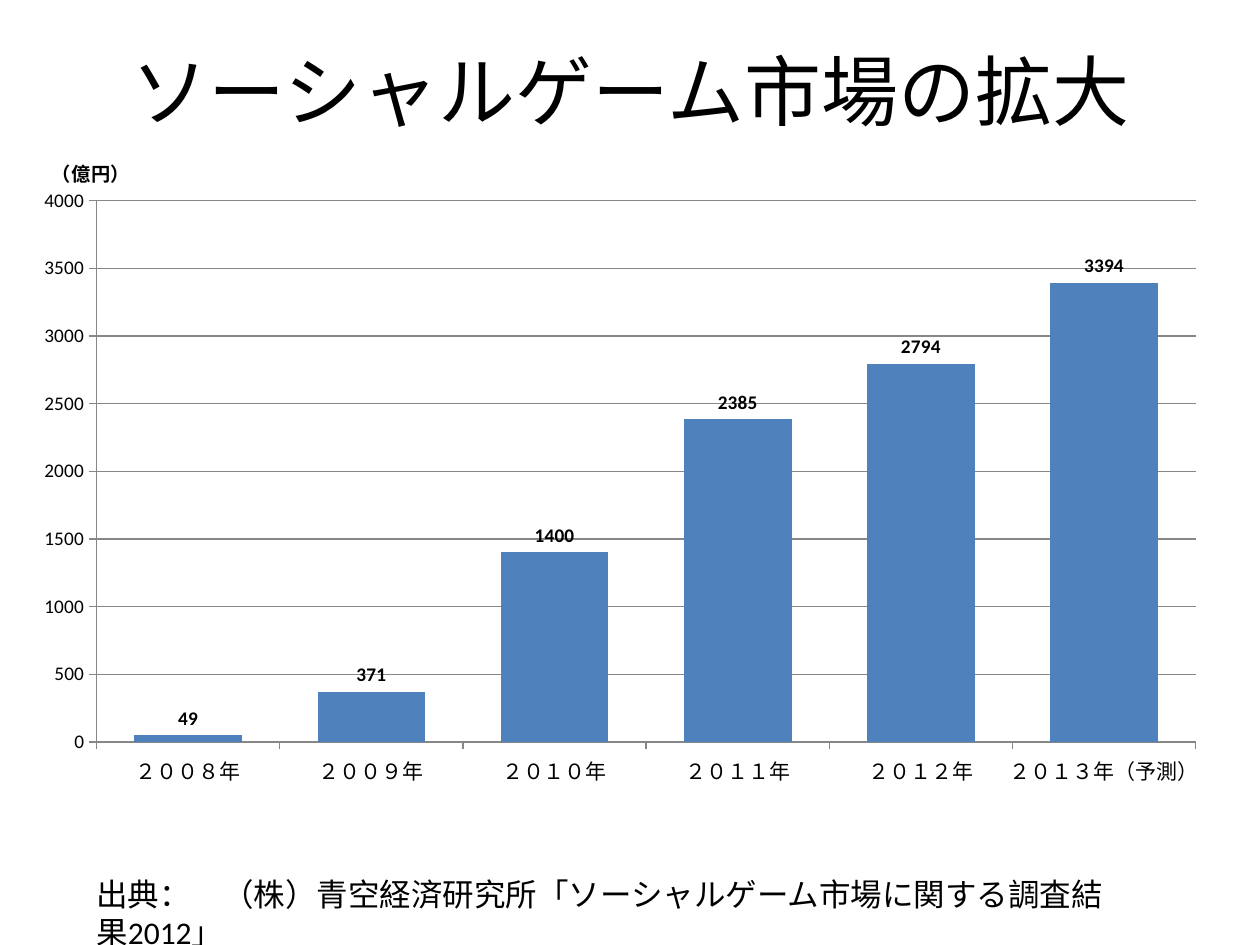
from lxml import etree
from pptx import Presentation
from pptx.chart.data import CategoryChartData as ChartData
from pptx.dml.color import RGBColor as RGB
from pptx.enum.chart import XL_CHART_TYPE as Kind
from pptx.enum.chart import XL_LABEL_POSITION as LabelPos
from pptx.enum.chart import XL_TICK_MARK as Tick
from pptx.enum.text import MSO_ANCHOR as Anchor
from pptx.enum.text import PP_ALIGN as Align
from pptx.oxml.ns import qn
from pptx.util import Emu, Pt

# Content
TITLE = "ソーシャルゲーム市場の拡大"
UNIT = "（億円）"
SALES = [
    ("２００８年", 49),
    ("２００９年", 371),
    ("２０１０年", 1400),
    ("２０１１年", 2385),
    ("２０１２年", 2794),
    ("２０１３年（予測）", 3394),
]
SOURCE = "出典：\u3000（株）青空経済研究所「ソーシャルゲーム市場に関する調査結果2012」".replace("\u3000", "　")

# Places in px: left, top, width, height
SLIDE = (1260, 945)
TITLE_BOX = (64, 26, 1134, 127)
CHART_BOX = (25, 135, 1235, 679)
PLOT_BOX = (97, 201, 1099, 541)
UNIT_AT = (49, 153)
SOURCE_BOX = (84, 869, 1053, 50)

THEME = dict(font="Calibri", ink=RGB(0, 0, 0), bar=RGB(0x4F, 0x81, 0xBD),
             line=RGB(0x87, 0x87, 0x87),
             title=44, source=18, cat=12, small=11, base=10)


def px(n):
    return Emu(round(n * 914400 / 126))


def style(font, size, bold=False):
    font.name = THEME["font"]
    font.size = Pt(THEME[size])
    font.bold = bold
    font.color.rgb = THEME["ink"]


def add_text(slide, box, text, size, align, anchor):
    frame = slide.shapes.add_textbox(*map(px, box)).text_frame
    frame.word_wrap = True
    frame.vertical_anchor = anchor
    frame.text = text
    para = frame.paragraphs[0]
    para.alignment = align
    style(para.runs[0].font, size)


def set_layout(node, after, **parts):
    """Put a manual layout into a chart node, right after the named child."""
    for old in node.findall(qn("c:layout")):
        node.remove(old)
    layout = etree.Element(qn("c:layout"))
    manual = etree.SubElement(layout, qn("c:manualLayout"))
    for name, val in parts.items():
        etree.SubElement(manual, qn("c:" + name)).set("val", str(val))
    prior = node.find(qn(after)) if after else None
    node.insert(0 if prior is None else node.index(prior) + 1, layout)


def share(left, top):
    """Chart fractions of a point on the slide."""
    x, y, wide, high = CHART_BOX
    return round((left - x) / wide, 3), round((top - y) / high, 3)


def add_sales(slide):
    data = ChartData()
    data.categories = [year for year, _ in SALES]
    data.add_series("Series 1", [val for _, val in SALES])
    chart = slide.shapes.add_chart(
        Kind.COLUMN_CLUSTERED, *map(px, CHART_BOX), data).chart
    chart.has_legend = chart.has_title = False
    style(chart.font, "base")

    # Bars and their values
    plot = chart.plots[0]
    plot.gap_width = 70
    plot.vary_by_categories = False
    fill = plot.series[0].format.fill
    fill.solid()
    fill.fore_color.rgb = THEME["bar"]
    plot.has_data_labels = True
    labels = plot.data_labels
    labels.show_value = True
    labels.position = LabelPos.OUTSIDE_END
    style(labels.font, "small", True)

    # Axes and grid
    years, yen = chart.category_axis, chart.value_axis
    for axis, size in ((years, "cat"), (yen, "small")):
        axis.major_tick_mark = Tick.OUTSIDE
        axis.minor_tick_mark = Tick.NONE
        axis.format.line.color.rgb = THEME["line"]
        style(axis.tick_labels.font, size)
    yen.minimum_scale, yen.maximum_scale, yen.major_unit = 0, 4000, 500
    yen.has_major_gridlines = True
    yen.major_gridlines.format.line.color.rgb = THEME["line"]

    # Unit above the value axis
    frame = yen.axis_title.text_frame
    frame.text = UNIT
    style(frame.paragraphs[0].runs[0].font, "small", True)
    title = yen.axis_title._element
    body = title.find(".//" + qn("a:bodyPr"))
    body.set("rot", "0")
    body.set("vert", "horz")
    x, y = share(*UNIT_AT)
    set_layout(title, "c:tx", xMode="edge", yMode="edge", x=x, y=y)

    # Plot area
    left, top, wide, high = PLOT_BOX
    x, y = share(left, top)
    set_layout(chart._chartSpace.find(".//" + qn("c:plotArea")), None,
               layoutTarget="inner", xMode="edge", yMode="edge", x=x, y=y,
               w=round(wide / CHART_BOX[2], 3),
               h=round(high / CHART_BOX[3], 3))


def main():
    deck = Presentation()
    deck.slide_width, deck.slide_height = map(px, SLIDE)
    slide = deck.slides.add_slide(deck.slide_layouts[6])
    add_text(slide, TITLE_BOX, TITLE, "title", Align.CENTER, Anchor.MIDDLE)
    add_sales(slide)
    add_text(slide, SOURCE_BOX, SOURCE, "source", Align.LEFT, Anchor.TOP)
    deck.save("out.pptx")


if __name__ == "__main__":
    main()
